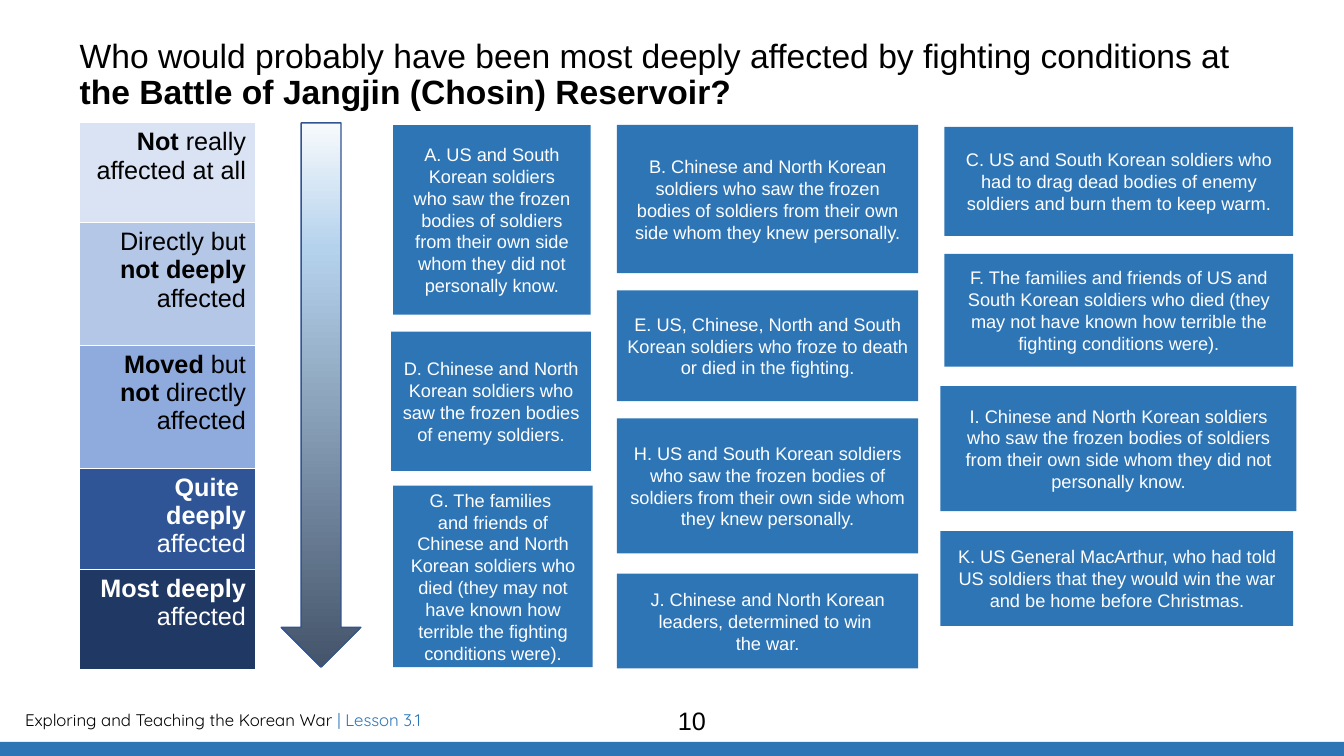
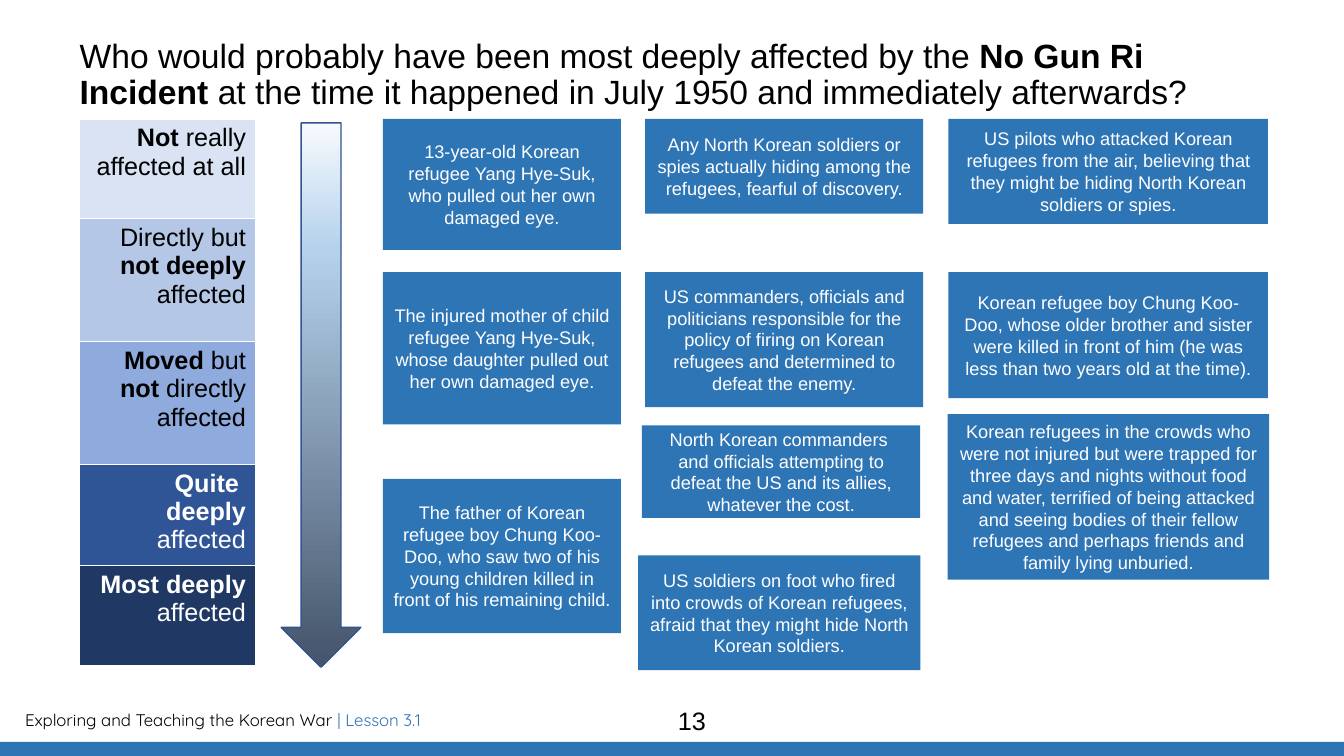
"""Build two ranking-activity slides for a lesson on the Korean War."""
from dataclasses import dataclass

from lxml.etree import SubElement
from pptx import Presentation
from pptx.dml.color import RGBColor
from pptx.enum.shapes import MSO_SHAPE as Shape
from pptx.enum.text import MSO_ANCHOR as Anchor, MSO_AUTO_SIZE as AutoSize, PP_ALIGN as Align
from pptx.oxml.ns import qn
from pptx.util import Pt


@dataclass(frozen=True)
class Theme:
    font: str = "Arial"
    footer_font: str = "Quicksand"
    title_size: float = 24
    level_size: float = 18
    card_size: float = 13
    footer_size: float = 12
    dark: str = "000000"
    light: str = "FFFFFF"
    accent: str = "2E75B6"
    arrow_line: str = "325491"
    arrow_stops: tuple = ((0, "F7FAFD"), (23, "B5D2EC"), (100, "44546A"))


@dataclass(frozen=True)
class Level:
    text: str
    height: float
    fill: str
    color: str


@dataclass(frozen=True)
class Card:
    left: float
    top: float
    width: float
    height: float
    text: str


@dataclass(frozen=True)
class Activity:
    title: str
    title_height: float
    scale_top: float
    page: str
    cards: tuple


THEME = Theme()
WIDTH, HEIGHT = 960, 540
MARGIN = 56.9
SCALE_WIDTH = 126

LEVELS = (
    Level("*Not* really affected at all", 71.3, "DAE3F3", THEME.dark),
    Level("Directly but *not deeply *affected", 87.8, "B4C7E7", THEME.dark),
    Level("*Moved* but *not* directly affected", 87.8, "8FAADC", THEME.dark),
    Level("*Quite \ndeeply *affected", 71.3, "2F5597", THEME.light),
    Level("*Most deeply *affected", 71.3, "203864", THEME.light),
)

ACTIVITIES = (
    Activity(
        "Who would probably have been most deeply affected by fighting conditions at "
        "*the Battle of Jangjin (Chosin) Reservoir?*",
        59.8, 87.8, "10",
        (
            Card(280.8, 89.3, 141.1, 135.4,
                 "A. US and South Korean soldiers\nwho saw the frozen bodies of soldiers "
                 "from their own side whom they did not personally know."),
            Card(440.6, 89.3, 215.3, 105.8,
                 "B. Chinese and North Korean soldiers who saw the frozen bodies of soldiers "
                 "from their own side whom they knew personally."),
            Card(674.6, 90.7, 249.1, 77.8,
                 "C. US and South Korean soldiers who had to drag dead bodies of enemy "
                 "soldiers and burn them to keep warm."),
            Card(279.4, 236.9, 142.6, 99.4,
                 "D. Chinese and North Korean soldiers who saw the frozen bodies of enemy "
                 "soldiers."),
            Card(440.6, 207.4, 215.3, 79.2,
                 "E. US, Chinese, North and South Korean soldiers who froze to death or died "
                 "in the fighting."),
            Card(674.6, 181.4, 249.1, 80.6,
                 "F. The families and friends of US and South Korean soldiers who died (they "
                 "may not have known how terrible the fighting conditions were)."),
            Card(280.8, 347, 142.6, 129.6,
                 "G. The families \vand friends of Chinese and North Korean soldiers who died "
                 "(they may not have known how terrible the fighting conditions were)."),
            Card(440.6, 298.8, 215.3, 96.5,
                 "H. US and South Korean soldiers who saw the frozen bodies of soldiers from "
                 "their own side whom they knew personally."),
            Card(671.8, 275.8, 254.2, 89.3,
                 "I. Chinese and North Korean soldiers\nwho saw the frozen bodies of soldiers "
                 "from their own side whom they did not personally know."),
            Card(440.6, 409.7, 215.3, 67.7,
                 "J. Chinese and North Korean leaders, determined to win \vthe war."),
            Card(671.8, 379.4, 252, 67.7,
                 "K. US General MacArthur, who had told US soldiers that they would win the "
                 "war and be home before Christmas."),
        ),
    ),
    Activity(
        "Who would probably have been most deeply affected by the *No Gun Ri Incident *"
        "at the time it happened in July 1950 and immediately afterwards?",
        56.9, 85, "13",
        (
            Card(273.6, 85, 169.9, 93.6,
                 "13-year-old Korean refugee Yang Hye-Suk, who pulled out her own damaged eye."),
            Card(273.6, 194.4, 169.9, 108.7,
                 "The injured mother of child refugee Yang Hye-Suk, whose daughter pulled out "
                 "her own damaged eye."),
            Card(273.6, 342, 169.9, 110.2,
                 "The father of Korean refugee boy Chung Koo- Doo, who saw two of his young "
                 "children killed in front of his remaining child."),
            Card(460.8, 85, 198.7, 67.7,
                 "Any North Korean soldiers or spies actually hiding among the refugees, "
                 "fearful of discovery."),
            Card(460.8, 194.4, 198.7, 96.5,
                 "US commanders, officials and politicians responsible for the policy of "
                 "firing on Korean refugees and determined to defeat the enemy."),
            Card(458.6, 303.8, 198.7, 66.2,
                 "North Korean commanders \vand officials attempting to defeat the US and its "
                 "allies, whatever the cost."),
            Card(455.8, 396.7, 201.6, 82.1,
                 "US soldiers on foot who fired into crowds of Korean refugees, afraid that "
                 "they might hide North Korean soldiers."),
            Card(677.5, 85, 228.2, 74.9,
                 "US pilots who attacked Korean refugees from the air, believing that they "
                 "might be hiding North Korean soldiers or spies."),
            Card(677.5, 194.4, 228.2, 90,
                 "Korean refugee boy Chung Koo- Doo, whose older brother and sister\n"
                 "were killed in front of him (he was less than two years old at the time)."),
            Card(676.8, 295.9, 229.7, 118.1,
                 "Korean refugees in the crowds who were not injured but were trapped for "
                 "three days and nights without food and water, terrified of being attacked "
                 "and seeing bodies of their fellow refugees and perhaps friends and family "
                 "lying unburied."),
        ),
    ),
)


def rgb(color: str) -> RGBColor:
    return RGBColor.from_string(color)


def points(*lengths: float) -> list:
    return [Pt(length) for length in lengths]


def style(paragraph, size: float, color: str, align: Align, font: str = THEME.font) -> None:
    paragraph.alignment = align
    paragraph.font.name = font
    paragraph.font.size = Pt(size)
    paragraph.font.color.rgb = rgb(color)


def write_marked(paragraph, text: str) -> None:
    for index, part in enumerate(text.split("*")):
        for line_index, line in enumerate(part.split("\n")):
            if line_index:
                paragraph.add_line_break()
            if line:
                run = paragraph.add_run()
                run.text = line
                run.font.bold = index % 2 == 1


def add_block(slide, kind: Shape, left: float, top: float, width: float, height: float):
    shape = slide.shapes.add_shape(kind, *points(left, top, width, height))
    shape.shadow.inherit = False
    shape.fill.solid()
    shape.fill.fore_color.rgb = rgb(THEME.accent)
    shape.line.fill.background()
    return shape


def add_text(slide, left: float, top: float, width: float, height: float):
    frame = slide.shapes.add_textbox(*points(left, top, width, height)).text_frame
    frame.word_wrap = True
    return frame.paragraphs[0]


def add_footer(slide, page: str) -> None:
    footer = add_text(slide, 10.8, 503.3, 563, 21.6)
    footer.add_run().text = "Exploring and Teaching the Korean War "
    lesson = footer.add_run()
    lesson.text = "| Lesson 3.1"
    style(footer, THEME.footer_size, THEME.dark, Align.LEFT, THEME.footer_font)
    lesson.font.color.rgb = rgb(THEME.accent)
    add_block(slide, Shape.RECTANGLE, 0, 530, WIDTH, HEIGHT - 530)
    number = add_text(slide, 311, 500.4, 366.5, 28.8)
    number.text = page
    style(number, THEME.level_size, THEME.dark, Align.CENTER)


def set_title(slide, text: str, height: float) -> None:
    title = slide.shapes.title
    title.left, title.top, title.width, title.height = points(MARGIN, 28.1, 828, height)
    frame = title.text_frame
    frame.margin_left = frame.margin_top = frame.margin_right = frame.margin_bottom = 0
    frame.vertical_anchor = Anchor.TOP
    frame.auto_size = AutoSize.NONE
    frame.word_wrap = True
    paragraph = frame.paragraphs[0]
    write_marked(paragraph, text)
    style(paragraph, THEME.title_size, THEME.dark, Align.LEFT)
    paragraph.line_spacing = 0.9


def add_borders(cell) -> None:
    properties = cell._tc.get_or_add_tcPr()
    for index, side in enumerate(("lnL", "lnR", "lnT", "lnB")):
        line = SubElement(properties, qn(f"a:{side}"), w=str(Pt(1)))
        fill = SubElement(line, qn("a:solidFill"))
        SubElement(fill, qn("a:srgbClr"), val=THEME.light)
        properties.insert(index, line)


def add_scale(slide, top: float) -> None:
    total = sum(level.height for level in LEVELS)
    table = slide.shapes.add_table(
        len(LEVELS), 1, *points(MARGIN, top, SCALE_WIDTH, total)).table
    table.first_row = table.horz_banding = False
    for row, level in zip(table.rows, LEVELS):
        row.height = Pt(level.height)
        cell = row.cells[0]
        cell.fill.solid()
        cell.fill.fore_color.rgb = rgb(level.fill)
        add_borders(cell)
        paragraph = cell.text_frame.paragraphs[0]
        write_marked(paragraph, level.text)
        style(paragraph, THEME.level_size, level.color, Align.RIGHT)


def add_arrow(slide) -> None:
    arrow = add_block(slide, Shape.DOWN_ARROW, 200.9, 87.8, 56.9, 388.8)
    arrow.line.color.rgb = rgb(THEME.arrow_line)
    arrow.line.width = Pt(1)
    arrow.fill.gradient()
    arrow.fill.gradient_angle = 270
    stops = arrow._element.spPr.find(f".//{qn('a:gsLst')}")
    for stop in list(stops):
        stops.remove(stop)
    for percent, color in THEME.arrow_stops:
        stop = SubElement(stops, qn("a:gs"), pos=str(percent * 1000))
        SubElement(stop, qn("a:srgbClr"), val=color)


def add_card(slide, card: Card) -> None:
    shape = add_block(slide, Shape.RECTANGLE, card.left, card.top, card.width, card.height)
    frame = shape.text_frame
    frame.word_wrap = True
    frame.vertical_anchor = Anchor.MIDDLE
    frame.text = card.text
    for paragraph in frame.paragraphs:
        style(paragraph, THEME.card_size, THEME.light, Align.CENTER)


def add_activity(presentation, activity: Activity) -> None:
    slide = presentation.slides.add_slide(presentation.slide_layouts.get_by_name("Title Only"))
    set_title(slide, activity.title, activity.title_height)
    add_footer(slide, activity.page)
    add_scale(slide, activity.scale_top)
    add_arrow(slide)
    for card in activity.cards:
        add_card(slide, card)


def main() -> None:
    presentation = Presentation()
    presentation.slide_width, presentation.slide_height = points(WIDTH, HEIGHT)
    for activity in ACTIVITIES:
        add_activity(presentation, activity)
    presentation.save("out.pptx")


if __name__ == "__main__":
    main()
